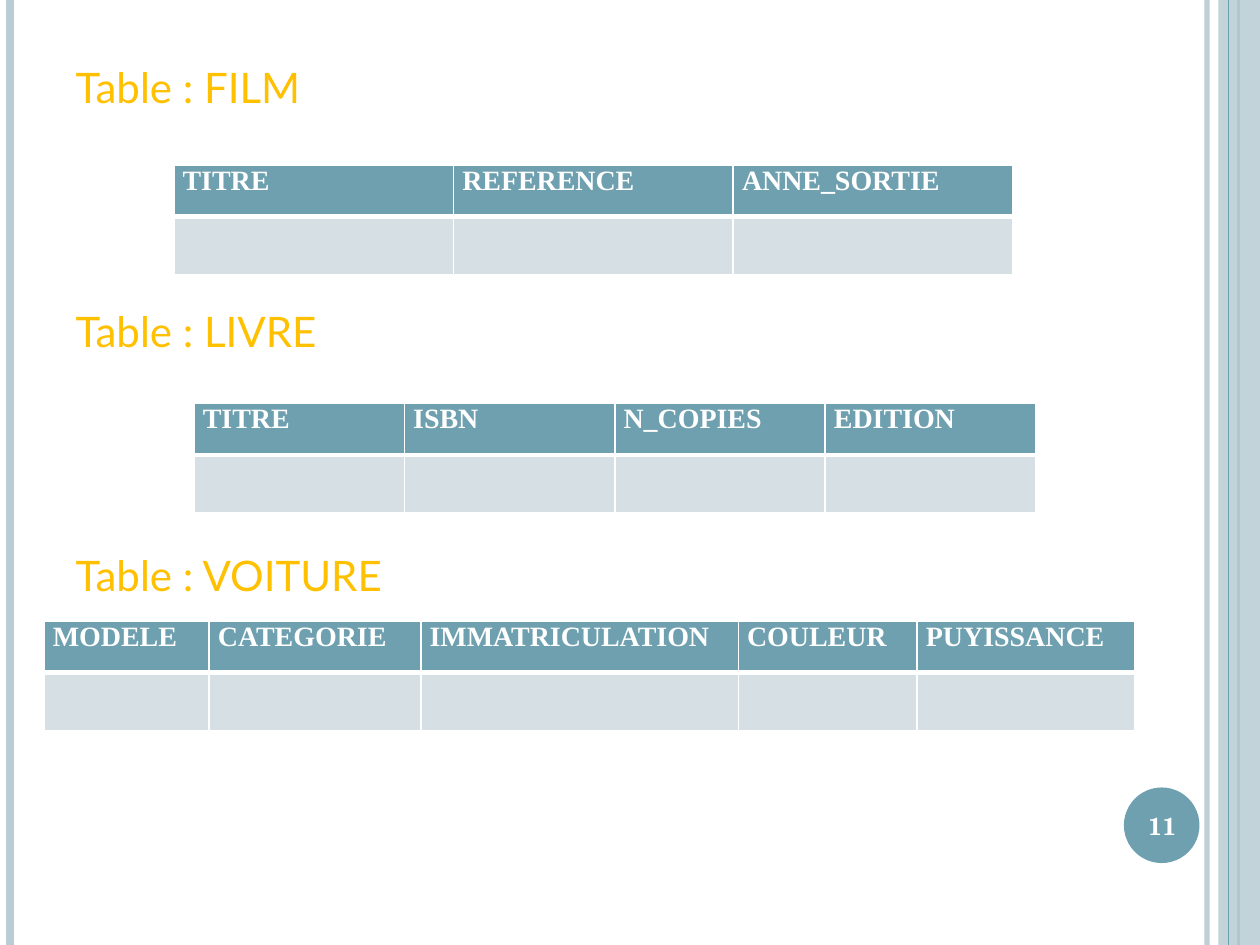
from pptx import Presentation
from pptx.dml.color import RGBColor
from pptx.enum.shapes import MSO_CONNECTOR, MSO_SHAPE
from pptx.enum.text import MSO_ANCHOR, PP_ALIGN
from pptx.oxml.ns import qn
from pptx.util import Inches, Pt
from lxml import etree

STRAIGHT = MSO_CONNECTOR.STRAIGHT
RECTANGLE, OVAL = MSO_SHAPE.RECTANGLE, MSO_SHAPE.OVAL
MIDDLE = MSO_ANCHOR.MIDDLE
CENTER, JUSTIFY = PP_ALIGN.CENTER, PP_ALIGN.JUSTIFY

# Content: heading, left, top, column widths, column names
TABLES = [
    ("Table\u00a0: FILM", 1.38, 1.31, [2.22] * 3,
     ["TITRE", "REFERENCE", "ANNE_SORTIE"]),
    ("Table\u00a0: LIVRE", 1.54, 3.2, [1.67] * 4,
     ["TITRE", "ISBN", "N_COPIES", "EDITION"]),
    ("Table\u00a0: VOITURE", 0.35, 4.93, [1.31, 1.68, 2.52, 1.42, 1.73],
     ["MODELE", "CATEGORIE", "IMMATRICULATION", "COULEUR", "PUYISSANCE"]),
]
PAGE_NUMBER = "11"

THEME = {
    "teal": "6EA0B0", "pale": "BACDD4", "cell": "D5DFE4",
    "white": "FFFFFF", "gold": "FFC000",
    "heading": ("Lato", 24), "column": ("Times New Roman", 16),
    "number": ("TeX Gyre Schola", 14),
}
WIDTH, HEIGHT = 10, 7.5
ROW_HEIGHTS = (0.41, 0.46)
HEADING_GAP = 110.4  # three empty lines of 34.8 pt plus 6 pt
INDENT = Inches(0.3)

# Page rules: x, colour, width, opacity in percent
RULES_BEHIND = [(9.58, "pale", 3, 93), (0.08, "pale", 4.5, 100),
                (9.83, "teal", 1.5, 100)]
RULES_FRONT = [(9.75, "teal", 0.75, 100)]


def color(name):
    return RGBColor.from_string(THEME[name])


def set_opacity(element, percent):
    if percent < 100:
        tone = next(element.iter(qn("a:srgbClr")))
        etree.SubElement(tone, qn("a:alpha")).set("val", str(percent * 1000))


def style(para, role, tint, bold=False):
    for span in para.runs:
        span.font.name, size = THEME[role]
        span.font.size = Pt(size)
        span.font.bold = bold
        span.font.color.rgb = color(tint)


def add_rules(page, rules):
    for x, tint, width, opacity in rules:
        rule = page.shapes.add_connector(
            STRAIGHT, Inches(x), 0, Inches(x), Inches(HEIGHT))
        rule.line.color.rgb = color(tint)
        rule.line.width = Pt(width)
        set_opacity(rule.line._ln, opacity)
        etree.SubElement(rule._element.spPr, qn("a:effectLst"))


def add_plain_shape(page, kind, area, tint, opacity=100):
    shape = page.shapes.add_shape(kind, *map(Inches, area))
    shape.shadow.inherit = False
    shape.fill.solid()
    shape.fill.fore_color.rgb = color(tint)
    shape.line.fill.background()
    set_opacity(shape._element.spPr, opacity)


def add_borders(cell, top, bottom):
    properties = cell._tc.get_or_add_tcPr()
    for side, width in (("L", 1), ("R", 1), ("T", top), ("B", bottom)):
        line = etree.SubElement(properties, qn("a:ln" + side), w=str(Pt(width)))
        fill = etree.SubElement(line, qn("a:solidFill"))
        etree.SubElement(fill, qn("a:srgbClr"), val=THEME["white"])


def add_table(page, left, top, widths, names):
    frame = page.shapes.add_table(
        2, len(names), Inches(left), Inches(top),
        Inches(sum(widths)), Inches(sum(ROW_HEIGHTS)))
    table = frame.table
    for row, height in zip(table.rows, ROW_HEIGHTS):
        row.height = Inches(height)
    for index, (width, name) in enumerate(zip(widths, names)):
        table.columns[index].width = Inches(width)
        header, empty = table.cell(0, index), table.cell(1, index)
        header.margin_left = header.margin_right = Inches(0.07)
        header.margin_top = header.margin_bottom = 0
        header.text_frame.text = name
        para = header.text_frame.paragraphs[0]
        para.alignment = JUSTIFY
        style(para, "column", "white", bold=True)
        add_borders(header, 1, 3)
        add_borders(empty, 3, 1)
        for cell, tint in ((header, "teal"), (empty, "cell")):
            cell.fill.solid()
            cell.fill.fore_color.rgb = color(tint)


def fill_headings(body):
    body.left, body.top = Inches(0.5), Inches(0.44)
    body.width, body.height = Inches(8.17), Inches(6.64)
    body.text_frame.text = "\n".join(table[0] for table in TABLES)
    for index, para in enumerate(body.text_frame.paragraphs):
        para.space_before = Pt(HEADING_GAP if index else 0)
        properties = para._p.get_or_add_pPr()
        properties.set("marL", str(INDENT))
        properties.set("indent", str(-INDENT))
        etree.SubElement(properties, qn("a:buNone"))
        style(para, "heading", "gold")


def add_page_number(page):
    box = page.shapes.add_textbox(*map(Inches, (8.89, 6.27, 0.67, 0.57)))
    box.text_frame.word_wrap = True
    box.text_frame.vertical_anchor = MIDDLE
    box.text_frame.text = PAGE_NUMBER
    para = box.text_frame.paragraphs[0]
    para.alignment = CENTER
    style(para, "number", "white", bold=True)


def main():
    deck = Presentation()
    deck.slide_width, deck.slide_height = Inches(WIDTH), Inches(HEIGHT)
    page = deck.slides.add_slide(deck.slide_layouts[1])
    title, body = page.placeholders
    title._element.getparent().remove(title._element)

    # Side decoration
    add_rules(page, RULES_BEHIND)
    add_plain_shape(page, RECTANGLE, (9.67, 0, 0.33, HEIGHT), "pale", 87)
    add_rules(page, RULES_FRONT)
    add_plain_shape(page, OVAL, (8.92, 6.25, 0.6, 0.6), "teal")

    # Headings, page number and tables
    fill_headings(body)
    add_page_number(page)
    for _, left, top, widths, names in TABLES:
        add_table(page, left, top, widths, names)

    deck.save("out.pptx")


if __name__ == "__main__":
    main()
